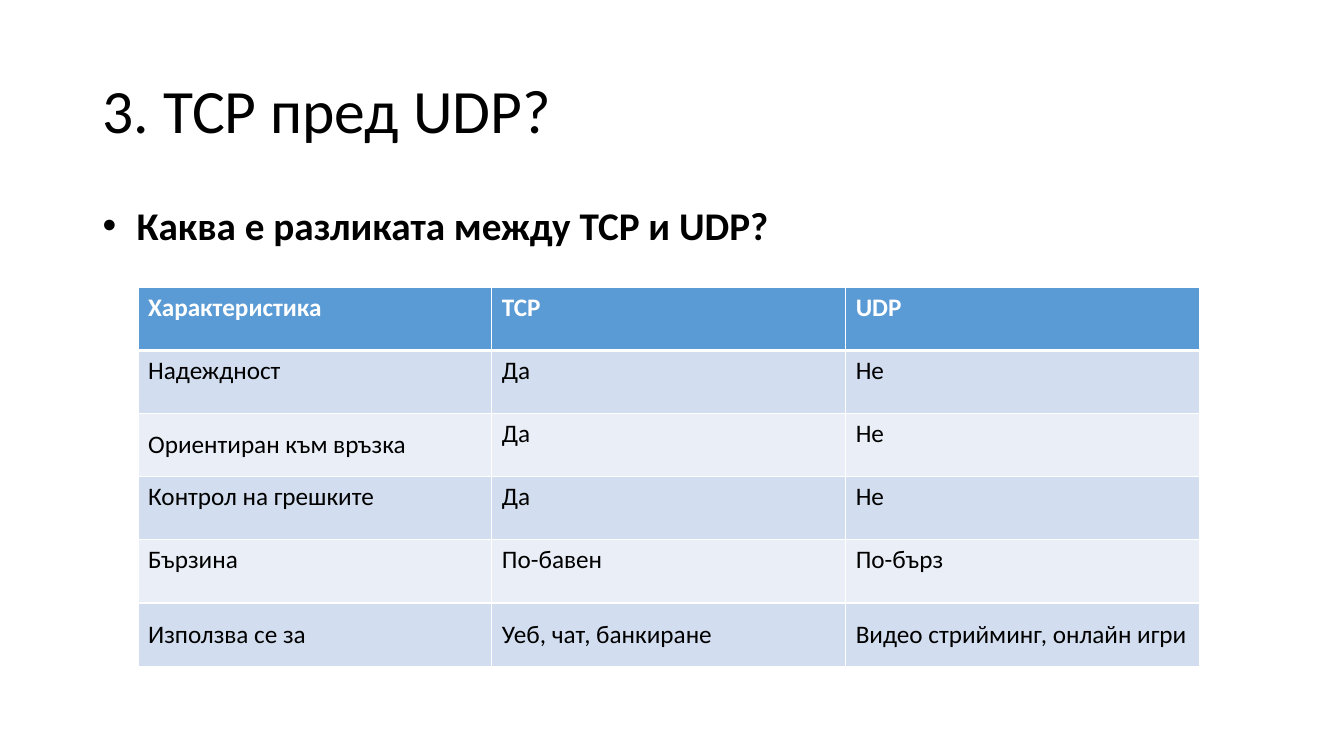
from dataclasses import dataclass

from lxml import etree
from pptx import Presentation
from pptx import util as u
from pptx.dml.color import RGBColor
from pptx.enum import text
from pptx.oxml import ns

BLACK = RGBColor(0x00, 0x00, 0x00)
WHITE = RGBColor(0xFF, 0xFF, 0xFF)
HEADER_BLUE = RGBColor(0x5B, 0x9B, 0xD5)
BAND_DARK = RGBColor(0xD2, 0xDE, 0xEF)
BAND_LIGHT = RGBColor(0xEA, 0xEF, 0xF7)

FONT = "Calibri"
COLUMN_WIDTH = 252.72
ROW_HEIGHT = 45.12
THIN, THICK = 1, 3
TOP = text.MSO_ANCHOR.TOP
MIDDLE = text.MSO_ANCHOR.MIDDLE


@dataclass(frozen=True)
class TextBlock:
    words: str
    top: float
    height: float
    size: float
    bold: bool = False
    anchor: text.MSO_ANCHOR = TOP
    space_before: float = 0
    bullet: str = ""


@dataclass(frozen=True)
class Row:
    words: tuple[str, str, str]
    middle_columns: tuple[int, ...] = ()


BLOCKS = (
    TextBlock("3. TCP пред UDP?", 28.8, 104.4, 44, anchor=MIDDLE),
    TextBlock(" Каква е разликата между TCP и UDP?", 144, 342.72, 28,
              bold=True, space_before=10, bullet="•"),
)

ROWS = (
    Row(("Характеристика", "TCP", "UDP")),
    Row(("Надеждност", "Да", "Не")),
    Row(("Ориентиран към връзка", "Да", "Не"), (0,)),
    Row(("Контрол на грешките", "Да", "Не")),
    Row(("Бързина", "По-бавен", "По-бърз")),
    Row(("Използва се за", "Уеб, чат, банкиране", "Видео стрийминг, онлайн игри"), (0, 1, 2)),
)


def apply_formats(target, formats: dict) -> None:
    for name, value in formats.items():
        setattr(target, name, value)


def write_span(para, words: str, size: float, bold: bool, color: RGBColor) -> None:
    span = para.add_run()
    span.text = words
    apply_formats(span.font, {"name": FONT, "size": u.Pt(size), "bold": bold})
    span.font.color.rgb = color


def add_bullet(para, symbol: str) -> None:
    properties = para._p.get_or_add_pPr()
    properties.set("marL", str(u.Pt(18)))
    properties.set("indent", str(u.Pt(-18)))
    etree.SubElement(properties, ns.qn("a:buFont"), typeface="Arial")
    etree.SubElement(properties, ns.qn("a:buChar"), char=symbol)


def draw_text(page, block: TextBlock) -> None:
    box = page.shapes.add_textbox(u.Pt(66.24), u.Pt(block.top), u.Pt(828), u.Pt(block.height))
    apply_formats(box.text_frame, {"word_wrap": True, "vertical_anchor": block.anchor})
    para = box.text_frame.paragraphs[0]
    apply_formats(para, {"line_spacing": 0.9, "space_before": u.Pt(block.space_before)})
    if block.bullet:
        add_bullet(para, block.bullet)
    write_span(para, block.words, block.size, block.bold, BLACK)


def draw_borders(cell, top: float, bottom: float) -> None:
    properties = cell._tc.get_or_add_tcPr()
    widths = {"lnL": THIN, "lnR": THIN, "lnT": top, "lnB": bottom}
    for position, (side, width) in enumerate(widths.items()):
        line = etree.Element(ns.qn(f"a:{side}"), w=str(u.Pt(width)))
        fill = etree.SubElement(line, ns.qn("a:solidFill"))
        etree.SubElement(fill, ns.qn("a:srgbClr"), val=str(WHITE))
        properties.insert(position, line)


def draw_cell(cell, words: str, row_index: int, anchor: text.MSO_ANCHOR) -> None:
    header = row_index == 0
    band = BAND_DARK if row_index % 2 else BAND_LIGHT
    cell.vertical_anchor = anchor
    cell.fill.solid()
    cell.fill.fore_color.rgb = HEADER_BLUE if header else band
    draw_borders(cell, THICK if row_index == 1 else THIN, THICK if header else THIN)
    write_span(cell.text_frame.paragraphs[0], words, 18, header, WHITE if header else BLACK)


def draw_table(page, rows: tuple[Row, ...]) -> None:
    column_count = len(rows[0].words)
    frame = page.shapes.add_table(
        len(rows), column_count, u.Pt(98.64), u.Pt(205.2),
        u.Pt(COLUMN_WIDTH * column_count), u.Pt(ROW_HEIGHT * len(rows)))
    table = frame.table
    for column in table.columns:
        column.width = u.Pt(COLUMN_WIDTH)
    for row_index, row in enumerate(rows):
        table.rows[row_index].height = u.Pt(ROW_HEIGHT)
        for column_index, words in enumerate(row.words):
            anchor = MIDDLE if column_index in row.middle_columns else TOP
            draw_cell(table.cell(row_index, column_index), words, row_index, anchor)


def main() -> None:
    deck = Presentation()
    apply_formats(deck, {"slide_width": u.Pt(960), "slide_height": u.Pt(540)})
    page = deck.slides.add_slide(deck.slide_layouts[6])
    for block in BLOCKS:
        draw_text(page, block)
    draw_table(page, ROWS)
    deck.save("out.pptx")


if __name__ == "__main__":
    main()
